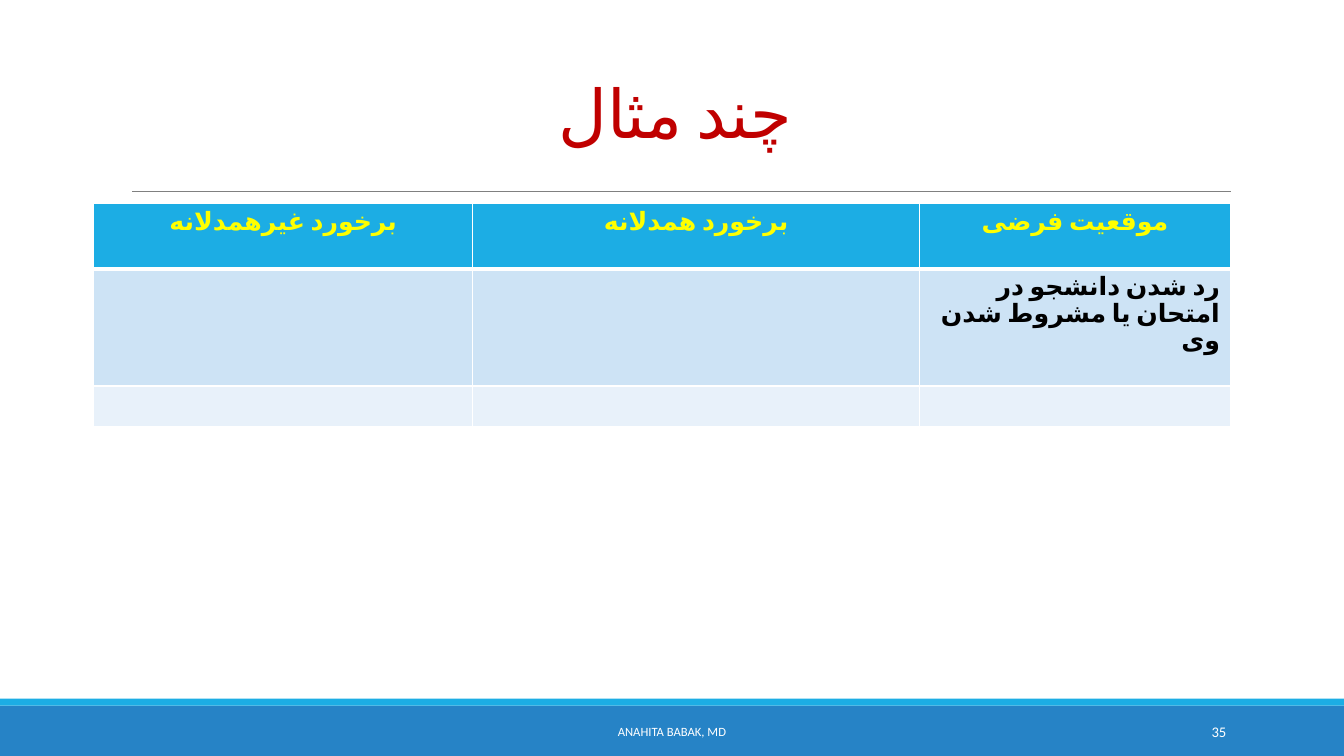
from dataclasses import dataclass

from lxml import etree
from pptx import Presentation, util as u
from pptx.dml.color import RGBColor
from pptx.enum import shapes, text
from pptx.oxml import ns

WIDE, HIGH = u.Inches(13.33), u.Inches(7.5)
FONT = "Calibri"
WHITE, BLUE, SKY = "FFFFFF", "2683C6", "1CADE4"
MID, LEFT, RIGHT = text.PP_ALIGN.CENTER, text.PP_ALIGN.LEFT, text.PP_ALIGN.RIGHT


@dataclass
class Box:
    left: float
    top: float
    width: float
    height: float

    def size(self) -> tuple:
        return across(self.left), down(self.top), across(self.width), down(self.height)


@dataclass
class Style:
    size: float
    tint: str
    align: int = MID
    bold: bool = False
    rtl: bool = False
    space: float = 1.0
    track: int = 0


@dataclass
class Bar:
    box: Box
    tint: str


@dataclass
class Label:
    box: Box
    words: str
    style: Style
    anchor: int = text.MSO_ANCHOR.MIDDLE


@dataclass
class Row:
    height: float
    fill: str
    words: tuple
    style: Style
    base: float = 1


def across(share: float) -> int:
    return round(WIDE * share / 100)


def down(share: float) -> int:
    return round(HIGH * share / 100)


def color(code: str) -> RGBColor:
    return RGBColor.from_string(code)


def apply(item, values: dict) -> None:
    for name, value in values.items():
        setattr(item, name, value)


def paint(item, code: str) -> None:
    item.fill.solid()
    item.fill.fore_color.rgb = color(code)


def write(frame, words: str, style: Style) -> None:
    para = frame.paragraphs[0]
    apply(para, {"alignment": style.align, "line_spacing": style.space})
    run = para.add_run()
    run.text = words
    apply(run.font, {"size": u.Pt(style.size), "bold": style.bold, "name": FONT})
    run.font.color.rgb = color(style.tint)
    if style.rtl:
        para._p.get_or_add_pPr().set("rtl", "1")
        props = run._r.get_or_add_rPr()
        props.set("lang", "fa-IR")
        etree.SubElement(props, ns.qn("a:cs"), typeface=FONT)
    if style.track:
        run._r.get_or_add_rPr().set("spc", str(style.track))


def draw_bar(slide, bar: Bar) -> None:
    shape = slide.shapes.add_shape(shapes.MSO_SHAPE.RECTANGLE, *bar.box.size())
    shape.shadow.inherit = False
    paint(shape, bar.tint)
    shape.line.fill.background()


def draw_rule(slide, start: float, end: float, top: float) -> None:
    rule = slide.shapes.add_connector(
        shapes.MSO_CONNECTOR.STRAIGHT, across(start), down(top), across(end), down(top))
    rule.line.color.rgb = color("808080")
    rule.line.width = u.Pt(0.5)
    etree.SubElement(rule._element.spPr, ns.qn("a:effectLst"))


def draw_label(slide, label: Label) -> None:
    frame = slide.shapes.add_textbox(*label.box.size()).text_frame
    apply(frame, {"word_wrap": True, "vertical_anchor": label.anchor})
    write(frame, label.words, label.style)


def edge(cell, side: str, points: float) -> None:
    line = etree.SubElement(
        cell._tc.get_or_add_tcPr(), ns.qn(f"a:ln{side}"), w=str(u.Pt(points)))
    fill = etree.SubElement(line, ns.qn("a:solidFill"))
    etree.SubElement(fill, ns.qn("a:srgbClr"), val=WHITE)


def draw_table(slide, left: float, top: float, widths: tuple, rows: tuple) -> None:
    box = Box(left, top, sum(widths), sum(row.height for row in rows))
    table = slide.shapes.add_table(len(rows), len(widths), *box.size()).table
    for col, width in zip(table.columns, widths):
        col.width = across(width)
    above = 1
    for i, row in enumerate(rows):
        table.rows[i].height = down(row.height)
        for cell, words in zip(table.rows[i].cells, row.words):
            for side, points in {"L": 1, "R": 1, "T": above, "B": row.base}.items():
                edge(cell, side, points)
            paint(cell, row.fill)
            if words:
                write(cell.text_frame, words, row.style)
        above = row.base


HEAD = Style(18, "FFFF00", bold=True, rtl=True, space=0.88)
BODY = Style(18, "000000", RIGHT, bold=True, rtl=True, space=0.88)

BARS = (
    Bar(Box(0, 93.33, 100, 6.67), BLUE),
    Bar(Box(0, 92.4, 100, 0.93), SKY),
)
LABELS = (
    Label(Box(9, 4.13, 82.5, 16.67), "چند مثال",
          Style(48, "C00000", rtl=True, space=0.85, track=-50), text.MSO_ANCHOR.BOTTOM),
    Label(Box(30.23, 94.13, 39.53, 5.33), "ANAHITA BABAK, MD", Style(9, WHITE)),
    Label(Box(81.25, 94.13, 10.73, 5.33), "35", Style(10.5, WHITE, RIGHT)),
)
ROWS = (
    Row(8.67, SKY, ("برخورد غیرهمدلانه", "برخورد همدلانه", "موقعیت فرضی"), HEAD, 3),
    Row(15.47, "CDE3F5", ("", "", "رد شدن دانشجو در امتحان یا مشروط شدن وی"), BODY),
    Row(5.33, "E8F1FA", ("", "", ""), BODY),
)


def main() -> None:
    deck = Presentation()
    apply(deck, {"slide_width": WIDE, "slide_height": HIGH})
    slide = deck.slides.add_slide(deck.slide_layouts[6])
    for bar in BARS:
        draw_bar(slide, bar)
    draw_rule(slide, 9.83, 91.6, 25.33)
    draw_table(slide, 6.98, 26.93, (28.2, 33.25, 23.1), ROWS)
    for label in LABELS:
        draw_label(slide, label)
    deck.save("out.pptx")


if __name__ == "__main__":
    main()
